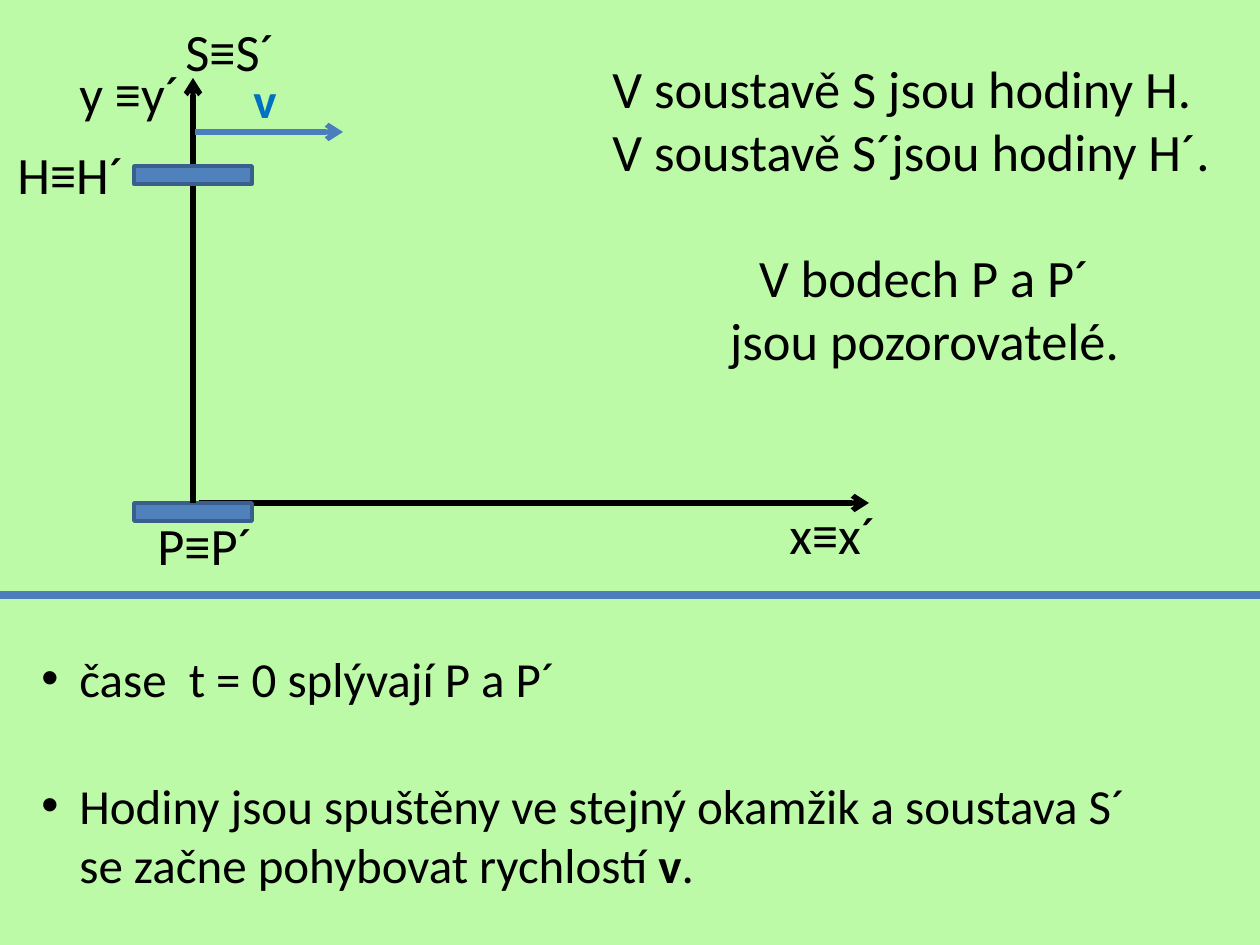
from pptx import Presentation
from pptx.dml.color import RGBColor
from pptx.enum.shapes import MSO_CONNECTOR, MSO_SHAPE
from pptx.enum.text import PP_ALIGN
from pptx.oxml.ns import qn
from pptx.util import Emu, Pt
from lxml.etree import SubElement

PX_PER_INCH = 126
FONT = "Calibri"
COLORS = {
    "background": "BDFAA8",
    "text": "000000",
    "clock": "4F81BD",
    "clock_edge": "3A5F8C",
    "accent": "4B7EBC",
    "velocity": "0070C0",
}


def px(length):
    return Emu(round(length * 914400 / PX_PER_INCH))


def color(name):
    return RGBColor.from_string(COLORS[name])


def add_line(page, start, end, name, width, arrow=True):
    points = [px(value) for value in (*start, *end)]
    line = page.shapes.add_connector(MSO_CONNECTOR.STRAIGHT, *points)
    line.line.color.rgb = color(name)
    line.line.width = Pt(width)
    if arrow:
        SubElement(line.line._get_or_add_ln(), qn("a:tailEnd"), type="arrow")
    SubElement(line._element.spPr, qn("a:effectLst"))
    return line


def add_clock(page, left, top):
    clock = page.shapes.add_shape(
        MSO_SHAPE.RECTANGLE, px(left), px(top), px(118), px(18))
    clock.shadow.inherit = False
    clock.fill.solid()
    clock.fill.fore_color.rgb = color("clock")
    clock.line.color.rgb = color("clock_edge")
    clock.line.width = Pt(2)
    return clock


def format_span(span, size, name="text", bold=False):
    span.font.name = FONT
    span.font.size = Pt(size)
    span.font.bold = bold
    span.font.color.rgb = color(name)


def add_text(page, left, top, width, height, text, size=30, name="text", bold=False):
    box = page.shapes.add_textbox(px(left), px(top), px(width), px(height))
    frame = box.text_frame
    frame.word_wrap = True
    frame.text = text
    for paragraph in frame.paragraphs:
        for span in paragraph.runs:
            format_span(span, size, name, bold)
    return frame


def add_bullet(paragraph):
    properties = paragraph._p.get_or_add_pPr()
    properties.set("marL", str(px(38)))
    properties.set("indent", str(-px(38)))
    SubElement(properties, qn("a:buFont"), typeface="Arial")
    SubElement(properties, qn("a:buChar"), char="•")


def add_diagram(page):
    add_line(page, (199, 503), (869, 503), "text", 3)
    lower_clock = add_clock(page, 134, 503)
    y_axis = add_line(page, (193, 503), (193, 78), "text", 3)
    y_axis.begin_connect(lower_clock, 0)
    add_clock(page, 134, 166)
    add_line(page, (195, 132), (343, 132), "accent", 3)

    labels = [
        (173, 13, 118, "S≡S´"),
        (145, 507, 125, "P≡P´"),
        (67, 55, 165, "y ≡y´"),
        (5, 136, 136, "H≡H´"),
        (777, 496, 165, "x≡x´"),
    ]
    for left, top, width, text in labels:
        add_text(page, left, top, width, 77, text)
    add_text(page, 241, 63, 69, 72, "v", 28, "velocity", True)


def add_description(page):
    frame = add_text(
        page, 600, 50, 649, 330,
        "V soustavě S jsou hodiny H.\n"
        "V soustavě S´jsou hodiny H´.\n"
        "V bodech P a P´\n"
        "jsou pozorovatelé.")
    observers = frame.paragraphs[2:]
    for paragraph in observers:
        paragraph.alignment = PP_ALIGN.CENTER
    observers[0].space_before = Pt(36)


def add_conditions(page):
    size = 28
    frame = add_text(
        page, 29, 642, 1191, 290,
        "čase  t = 0 splývají P a P´\n"
        "Hodiny jsou spuštěny ve stejný okamžik a soustava S´\v"
        "se začne pohybovat rychlostí ", size)
    for paragraph in frame.paragraphs:
        add_bullet(paragraph)
        paragraph.font.size = Pt(size)
    start = frame.paragraphs[1]
    start.space_before = Pt(39)
    for text, bold in (("v", True), (".", False)):
        span = start.add_run()
        span.text = text
        format_span(span, size, bold=bold)


def main():
    deck = Presentation()
    deck.slide_width, deck.slide_height = px(1260), px(945)
    page = deck.slides.add_slide(deck.slide_layouts[6])
    page.background.fill.solid()
    page.background.fill.fore_color.rgb = color("background")
    add_diagram(page)
    add_description(page)
    add_line(page, (0, 595), (1260, 595), "accent", 4.5, arrow=False)
    add_conditions(page)
    deck.save("out.pptx")


if __name__ == "__main__":
    main()
